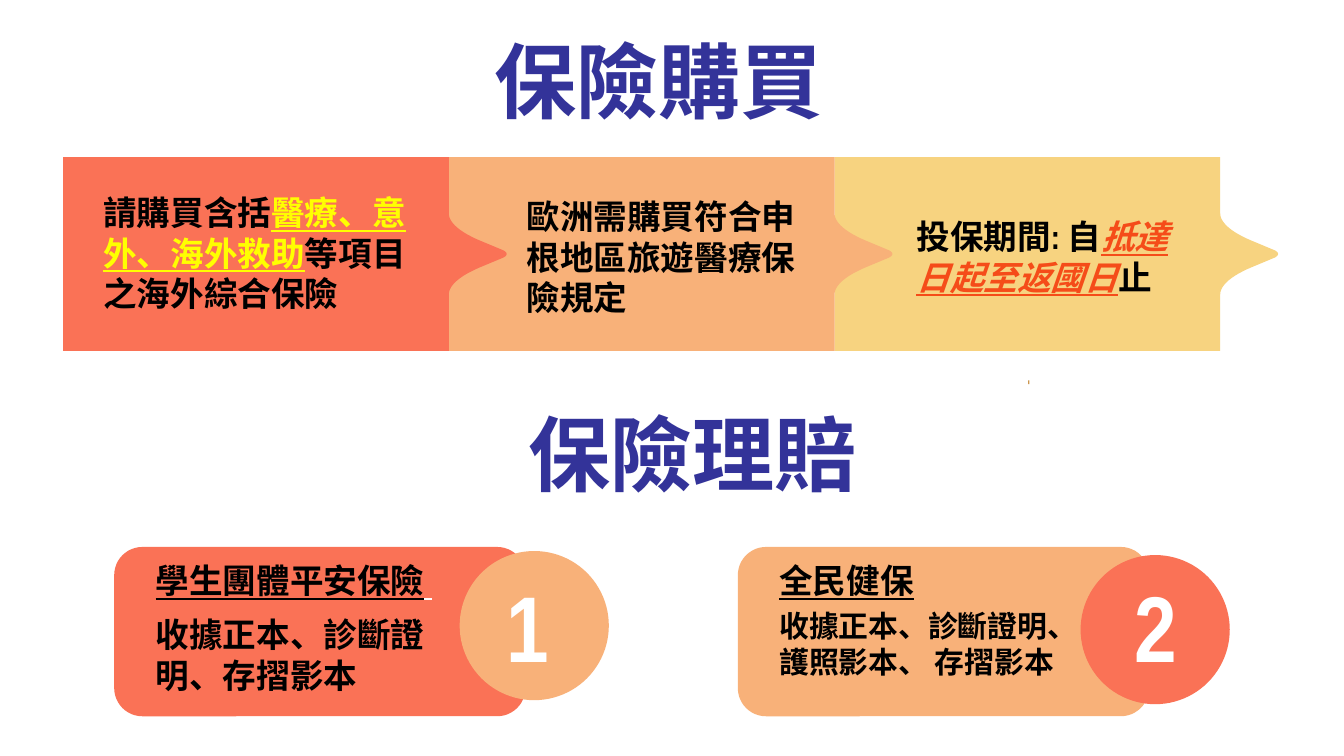
from pptx import Presentation
from pptx.dml.color import RGBColor
from pptx.enum.shapes import MSO_SHAPE as SHAPE
from pptx.enum.text import MSO_ANCHOR as ANCHOR, MSO_AUTO_SIZE, PP_ALIGN as ALIGN
from pptx.oxml.ns import qn
from pptx.util import Inches, Pt
from lxml import etree

COLORS = {
    "coral": "FA7256", "orange": "F8B179", "yellow": "F7D380",
    "navy": "333399", "black": "000000", "white": "FFFFFF",
    "highlight": "FFFF00", "red": "F54C19", "speck": "CC974F",
}
CJK = "Noto Sans CJK SC"
NARROW = "Arial Narrow"


def rgb(name):
    return RGBColor.from_string(COLORS[name])


def paint(sp, color):
    sp.shadow.inherit = False
    sp.fill.solid()
    sp.fill.fore_color.rgb = rgb(color)
    sp.line.fill.background()


def add_shape(s, kind, x, y, w, h, color):
    sp = s.shapes.add_shape(kind, Inches(x), Inches(y), Inches(w), Inches(h))
    paint(sp, color)


def write(sp, runs, size, font, align=ALIGN.LEFT, anchor=ANCHOR.TOP, cjk=True):
    tf = sp.text_frame
    tf.word_wrap = True
    tf.auto_size = MSO_AUTO_SIZE.NONE
    tf.vertical_anchor = anchor
    tf.margin_left = tf.margin_right = tf.margin_top = tf.margin_bottom = Inches(0.1)
    p = tf.paragraphs[0]
    p.alignment = align
    if cjk:
        p.line_spacing = Pt(round(size * 1.2, 1))
    for text, color, underline, italic in runs:
        r = p.add_run()
        r.text = text
        r.font.size = Pt(size)
        r.font.name = font
        r.font.bold = True
        r.font.underline = underline
        r.font.italic = italic
        r.font.color.rgb = rgb(color)
        ea = etree.Element(qn("a:ea"), typeface=CJK)
        r.font._element.find(qn("a:latin")).addnext(ea)


def add_text(s, x, y, w, h, runs, size, font=NARROW, **options):
    sp = s.shapes.add_textbox(Inches(x), Inches(y), Inches(w), Inches(h))
    write(sp, runs, size, font, **options)


def plain(text, color="black", underline=False, italic=False):
    return (text, color, underline, italic)


def bezier(a, b, c, d, steps=12):
    for i in range(1, steps + 1):
        t = i / steps
        u = 1 - t
        yield tuple(u**3 * a[k] + 3 * u * u * t * b[k] + 3 * u * t * t * c[k] + t**3 * d[k]
                    for k in (0, 1))


def add_step(s, x, y, w, h, color):
    mid = h / 2
    upper = [*bezier((w, mid - 0.3), (w, mid - 0.23), (w + 0.09, mid - 0.16), (w + 0.23, mid - 0.1)),
             *bezier((w + 0.4, mid - 0.03), (w + 0.42, mid - 0.02), (w + 0.43, mid - 0.01), (w + 0.43, mid))]
    lower = [(px, h - py) for px, py in reversed(upper[:-1])]
    points = [(w, 0), (w, mid - 0.3), *upper, *lower, (w, mid + 0.3), (w, h), (0, h)]
    builder = s.shapes.build_freeform(Inches(x), Inches(y))
    builder.add_line_segments([(Inches(x + px), Inches(y + py)) for px, py in points], close=True)
    paint(builder.convert_to_shape(), color)


def add_title(s, x, y, w, h, text):
    title = s.shapes.title
    title.left, title.top, title.width, title.height = map(Inches, (x, y, w, h))
    write(title, [plain(text, "navy")], 44, "Arial", align=ALIGN.CENTER, anchor=ANCHOR.BOTTOM)


def add_purchase(s, x, y, w, h):
    step_w = w / 3
    steps = [
        ("coral", (0.2, 0.16, 2.48, 1.02),
         [plain("請購買含括"), plain("醫療、意外、海外救助", "highlight", True),
          plain("等項目之海外綜合保險")]),
        ("orange", (3.35, 0.19, 2.36, 0.44),
         [plain("歐洲需購買符合申根地區旅遊醫療保險規定")]),
        ("yellow", (6.25, 0.34, 2.32, 0.44),
         [plain("投保期間: 自"), plain("抵達日起至返國日", "red", True, True), plain("止")]),
    ]
    for i in (2, 1, 0):
        add_step(s, x + i * step_w, y, step_w, h, steps[i][0])
    for _, (dx, dy, tw, th), runs in steps:
        add_text(s, x + dx, y + dy, tw, th, runs, 18)


def add_claim(s, x, y, number, colors, heading, body, body_box, body_size, circle, number_x):
    add_shape(s, SHAPE.ROUNDED_RECTANGLE, x, y, 3.06, 1.26, colors[0])
    add_shape(s, SHAPE.OVAL, x + circle[0], y + circle[1], 1.11, 1.11, colors[1])
    add_text(s, x + number_x, y + 0.15, 0.76, 0.86, [plain(number, "white")], 50,
             align=ALIGN.CENTER, anchor=ANCHOR.MIDDLE, cjk=False)
    add_text(s, x + 0.21, y, 2.72, 0.36, heading, 18)
    dy, w = body_box
    add_text(s, x + 0.21, y + dy, w, 0.62, [plain(body)], body_size, CJK)


def main():
    prs = Presentation()
    prs.slide_width, prs.slide_height = Inches(10), Inches(10 * 9 / 16)
    s = prs.slides.add_slide(prs.slide_layouts[5])
    add_title(s, 0.47, 0.49, 9, 0.57, "保險購買 ")
    add_purchase(s, 0.47, 1.17, 8.61, 1.44)
    add_shape(s, SHAPE.RECTANGLE, 7.65, 2.83, 0.01, 0.03, "speck")
    add_text(s, 2.51, 2.9, 5.29, 0.94, [plain("保險理賠", "navy")], 44, "Arial",
             align=ALIGN.CENTER)
    add_claim(s, 0.85, 4.07, "1", ("coral", "orange"),
              [plain("學生團體平安保險", underline=True), plain(" ", "white", True)],
              "收據正本、診斷證明、存摺影本", (0.4, 2.24), 18, (2.57, 0.03), 2.7)
    add_claim(s, 5.49, 4.07, "2", ("orange", "coral"), [plain("全民健保", underline=True)],
              "收據正本、診斷證明、護照影本、 存摺影本", (0.35, 2.47), 16, (2.55, 0.06), 2.73)
    prs.save("out.pptx")


if __name__ == "__main__":
    main()
